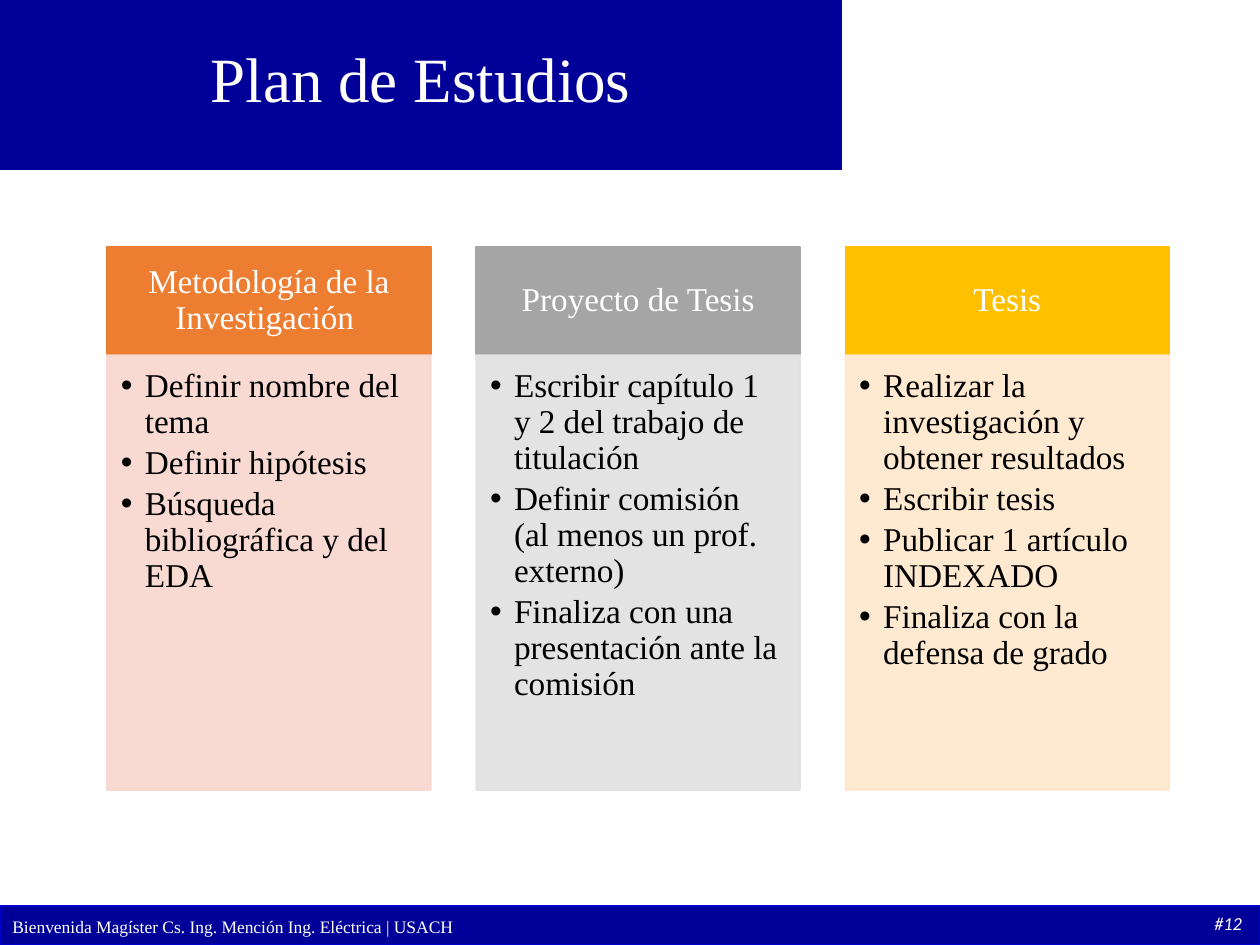
from lxml.etree import SubElement
from pptx import Presentation
from pptx.dml.color import RGBColor
from pptx.enum.shapes import MSO_SHAPE
from pptx.enum.text import MSO_ANCHOR, MSO_AUTO_SIZE, PP_ALIGN
from pptx.oxml.ns import qn
from pptx.util import Inches, Pt

WHITE = RGBColor(0xFF, 0xFF, 0xFF)
BLACK = RGBColor(0x00, 0x00, 0x00)
NAVY = RGBColor(0x00, 0x00, 0x99)
BLUE = RGBColor(0x00, 0x00, 0xCC)
ORANGE = RGBColor(0xED, 0x7D, 0x31)
GRAY = RGBColor(0xA5, 0xA5, 0xA5)
GOLD = RGBColor(0xFF, 0xC0, 0x00)
PALE_ORANGE = RGBColor(0xF8, 0xD7, 0xCE)
PALE_GRAY = RGBColor(0xE1, 0xE1, 0xE1)
PALE_GOLD = RGBColor(0xFF, 0xE8, 0xCC)

SERIF = "Times New Roman"
TITLE = "Plan de Estudios"
FOOTER = "Bienvenida Magíster Cs. Ing. Mención Ing. Eléctrica | USACH"
PAGE = "#12"
STAGES = [
    ("Metodología de la Investigación ", ORANGE, PALE_ORANGE, [
        "Definir nombre del tema",
        "Definir hipótesis",
        "Búsqueda bibliográfica y del EDA",
    ]),
    ("Proyecto de Tesis", GRAY, PALE_GRAY, [
        "Escribir capítulo 1 y 2 del trabajo de titulación",
        "Definir comisión (al menos un prof. externo)",
        "Finaliza con una presentación ante la comisión",
    ]),
    ("Tesis", GOLD, PALE_GOLD, [
        "Realizar la investigación y obtener resultados",
        "Escribir tesis",
        "Publicar 1 artículo INDEXADO",
        "Finaliza con la defensa de grado",
    ]),
]
LEFT, STEP, WIDTH = 0.85, 2.93, 2.57
HEADER_TOP, HEADER_HEIGHT = 1.96, 0.85
BODY_TOP, BODY_HEIGHT = 2.82, 3.45
TEXT_SIZE = 19


def add_rectangle(slide, box, fill, line):
    shape = slide.shapes.add_shape(MSO_SHAPE.RECTANGLE, *map(Inches, box))
    shape.shadow.inherit = False
    shape.fill.solid()
    shape.fill.fore_color.rgb = fill
    shape.line.color.rgb = line
    shape.line.width = Pt(1)
    return shape


def set_opacity(shape, percent):
    for color in shape.element.spPr.iter(qn("a:srgbClr")):
        SubElement(color, qn("a:alpha"), val=str(percent * 1000))


def set_frame(frame, anchor, margins):
    frame.word_wrap = True
    frame.vertical_anchor = anchor
    frame.margin_left, frame.margin_top, frame.margin_right, frame.margin_bottom = map(Inches, margins)


def add_run(paragraph, text, size, color, font=SERIF, italic=False):
    run = paragraph.add_run()
    run.text = text
    run.font.name = font
    run.font.size = Pt(size)
    run.font.color.rgb = color
    run.font.italic = italic


def add_bullet(paragraph, text):
    paragraph.level = 1
    properties = paragraph._p.get_or_add_pPr()
    properties.set("marL", str(Inches(0.19)))
    properties.set("indent", str(-Inches(0.19)))
    SubElement(properties, qn("a:buFont"), typeface="Arial")
    SubElement(properties, qn("a:buChar"), char="•")
    paragraph.alignment = PP_ALIGN.LEFT
    paragraph.line_spacing = 0.9
    paragraph.space_after = Pt(TEXT_SIZE * 0.15)
    add_run(paragraph, text, TEXT_SIZE, BLACK)


def add_stage(slide, left, name, strong, pale, tasks):
    header = add_rectangle(slide, (left, HEADER_TOP, WIDTH, HEADER_HEIGHT), strong, strong)
    set_frame(header.text_frame, MSO_ANCHOR.MIDDLE, (0.15, 0.08, 0.15, 0.08))
    heading = header.text_frame.paragraphs[0]
    heading.alignment = PP_ALIGN.CENTER
    heading.line_spacing = 0.9
    add_run(heading, name, TEXT_SIZE, WHITE)

    body = add_rectangle(slide, (left, BODY_TOP, WIDTH, BODY_HEIGHT), pale, pale)
    set_opacity(body, 90)
    frame = body.text_frame
    set_frame(frame, MSO_ANCHOR.TOP, (0.11, 0.11, 0.15, 0.17))
    for index, task in enumerate(tasks):
        add_bullet(frame.add_paragraph() if index else frame.paragraphs[0], task)


def add_title(slide):
    title = slide.shapes.title
    banner = add_rectangle(slide, (0, 0, 6.68, 1.34), NAVY, NAVY)
    title.element.addprevious(banner.element)
    title.left, title.top, title.width, title.height = map(Inches, (0, 0, 6.68, 1.31))
    frame = title.text_frame
    set_frame(frame, MSO_ANCHOR.MIDDLE, (0.1, 0.05, 0.1, 0.05))
    frame.auto_size = MSO_AUTO_SIZE.NONE
    paragraph = frame.paragraphs[0]
    paragraph.alignment = PP_ALIGN.CENTER
    paragraph.line_spacing = 0.9
    add_run(paragraph, TITLE, 36, WHITE)


def add_footer(slide):
    add_rectangle(slide, (0, 7.19, 10, 0.31), NAVY, BLUE)
    note = slide.shapes.add_textbox(*map(Inches, (0, 7.22, 9.23, 0.27)))
    note.text_frame.word_wrap = True
    add_run(note.text_frame.paragraphs[0], FOOTER, 10, WHITE)
    number = slide.shapes.add_textbox(*map(Inches, (9.54, 7.19, 0.53, 0.28)))
    number.text_frame.word_wrap = False
    add_run(number.text_frame.paragraphs[0], PAGE, 10.5, WHITE, "Calibri", True)


def main():
    presentation = Presentation()
    presentation.slide_width, presentation.slide_height = Inches(10), Inches(7.5)
    slide = presentation.slides.add_slide(presentation.slide_layouts[5])
    add_title(slide)
    add_footer(slide)
    for index, stage in enumerate(STAGES):
        add_stage(slide, LEFT + index * STEP, *stage)
    presentation.save("out.pptx")


if __name__ == "__main__":
    main()
